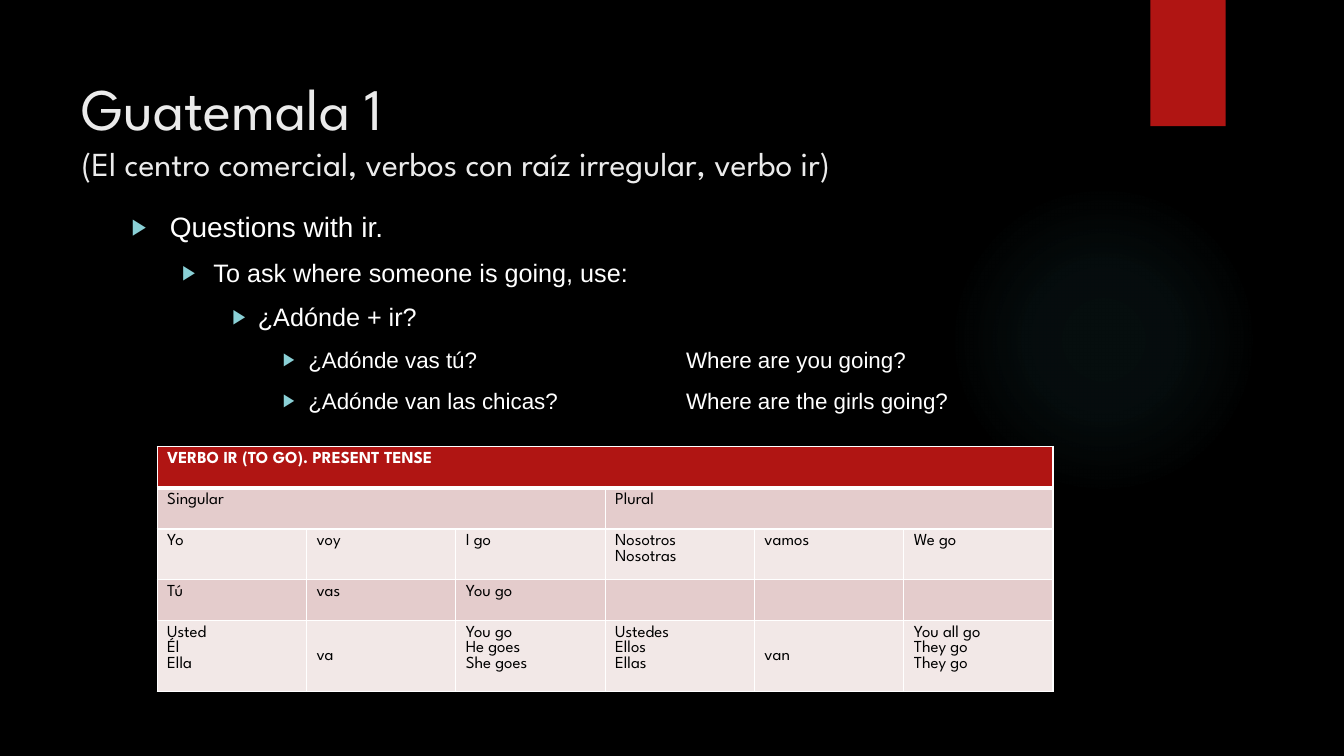
from pptx import Presentation
from pptx.dml.color import RGBColor
from pptx.enum.shapes import MSO_SHAPE as Kind
from pptx.enum.text import MSO_ANCHOR as Anchor
from pptx.oxml import parse_xml
from pptx.oxml.ns import nsdecls
from pptx.util import Cm, Pt

HEAD, BODY = "League Spartan", "Arial"
RED, WHITE, BLACK = "B01513", "FFFFFF", "000000"
BANDS = "E4CCCC", "F2E8E7"

POINTS = [
    (0, 20, "Questions with ir."),
    (1, 18, "To ask where someone is going, use:"),
    (2, 18, "¿Adónde + ir?"),
    (3, 16, "¿Adónde vas tú?\tWhere are you going?"),
    (3, 16, "¿Adónde van las chicas?\tWhere are the girls going?"),
]
INDENTS = [(0.96, 0.96), (2.06, 0.79), (3.18, 0.64), (4.45, 0.64)]

ROWS = [
    ["VERBO IR (TO GO). PRESENT TENSE", "", "", "", "", ""],
    ["Singular", "", "", "Plural", "", ""],
    ["Yo", "voy", "I go", "Nosotros\nNosotras", "vamos", "We go"],
    ["Tú", "vas", "You go", "", "", ""],
    ["Usted\nÉl\nElla", "va", "You go\nHe goes\nShe goes",
     "Ustedes\nEllos\nEllas", "van", "You all go\nThey go\nThey go"],
]
SPANS = [(0, 0, 5), (1, 0, 2), (1, 3, 5)]


def color(code):
    return RGBColor.from_string(code)


def xml(tag, inner="", **attrs):
    text = " ".join(f'{key}="{val}"' for key, val in attrs.items())
    return parse_xml(f"<a:{tag} {nsdecls('a')} {text}>{inner}</a:{tag}>")


def style(font, name, size, code, bold=False):
    font.name, font.size, font.bold = name, Pt(size), bold
    font.color.rgb = color(code)


def plain(slide, kind, box):
    shape = slide.shapes.add_shape(kind, *map(Cm, box))
    shape.shadow.inherit = False
    shape.line.fill.background()
    return shape


def add_glow(slide, box):
    glow = plain(slide, Kind.OVAL, box)
    glow.fill.gradient()
    grad = glow.fill._xPr.find(".//{*}gradFill")
    stops = "".join(
        f'<a:gs pos="{pos}000"><a:srgbClr val="50B9C1">'
        f'<a:alpha val="{alpha}000"/></a:srgbClr></a:gs>'
        for pos, alpha in [(0, 7), (36, 6), (69, 0)])
    for part in list(grad):
        grad.remove(part)
    grad.append(xml("gsLst", stops))
    centre = '<a:fillToRect l="50000" t="50000" r="50000" b="50000"/>'
    grad.append(xml("path", centre, path="circle"))


def add_tab(slide, box):
    tab = plain(slide, Kind.RECTANGLE, box)
    tab.fill.solid()
    tab.fill.fore_color.rgb = color(RED)


def add_title(slide, box):
    title = slide.shapes.title
    title.left, title.top, title.width, title.height = map(Cm, box)
    frame = title.text_frame
    frame.vertical_anchor = Anchor.MIDDLE
    frame.text = ("Guatemala 1\v"
                  "(El centro comercial, verbos con raíz irregular, verbo ir)")
    para = frame.paragraphs[0]
    para.alignment = 1
    for run, size in zip(para.runs, (42, 24)):
        style(run.font, HEAD, size, "EBEBEB")


def add_points(slide, box):
    frame = slide.shapes.add_textbox(*map(Cm, box)).text_frame
    frame.word_wrap = True
    frame.text = "\n".join(text for _, _, text in POINTS)
    for num, (para, (level, size, _)) in enumerate(
            zip(frame.paragraphs, POINTS)):
        left, hang = INDENTS[level]
        props = para._p.get_or_add_pPr()
        props.set("marL", str(Cm(left)))
        props.set("indent", str(-Cm(hang)))
        para.level = level
        para.space_before = Pt(10 if num else 0)
        props.append(xml("buClr", '<a:srgbClr val="8AD0D6"/>'))
        props.append(xml("buSzPct", val=80000))
        props.append(xml("buFont", typeface=BODY))
        props.append(xml("buChar", char="▶"))
        if level == 3:
            stop = f'<a:tab pos="{Cm(13.97)}" algn="l"/>'
            props.append(xml("tabLst", stop))
        for run in para.runs:
            style(run.font, BODY, size, WHITE)


def add_edges(cell, base):
    props = cell._tc.get_or_add_tcPr()
    fill = f'<a:solidFill><a:srgbClr val="{WHITE}"/></a:solidFill>'
    widths = {"lnL": 1, "lnR": 1, "lnT": 1, "lnB": base}
    for spot, (tag, width) in enumerate(widths.items()):
        props.insert(spot, xml(tag, fill, w=Pt(width)))


def add_verbs(slide, box):
    frame = slide.shapes.add_table(len(ROWS), len(ROWS[0]), *map(Cm, box))
    table = frame.table
    for row in table.rows:
        row.height = Cm(1.04)
    for r, row in enumerate(ROWS):
        for c, text in enumerate(row):
            cell = table.cell(r, c)
            cell.text = text
            cell.fill.solid()
            cell.fill.fore_color.rgb = color(BANDS[(r + 1) % 2] if r else RED)
            add_edges(cell, 1 if r else 3)
            for para in cell.text_frame.paragraphs:
                style(para.font, HEAD, 12, BLACK if r else WHITE, r == 0)
                for run in para.runs:
                    style(run.font, HEAD, 12, BLACK if r else WHITE, r == 0)
            if text in ("va", "van"):
                cell.vertical_anchor = Anchor.MIDDLE
    for r, first, last in SPANS:
        table.cell(r, first).merge(table.cell(r, last))


def main():
    deck = Presentation()
    deck.slide_width, deck.slide_height = Cm(33.87), Cm(19.05)
    slide = deck.slides.add_slide(deck.slide_layouts[5])
    slide.background.fill.solid()
    slide.background.fill.fore_color.rgb = color(BLACK)
    add_glow(slide, (23.9, 4.65, 7.82, 7.82))
    add_tab(slide, (28.99, 0, 1.9, 3.18))
    add_title(slide, (1.8, 1.27, 26.14, 3.89))
    add_points(slide, (3.07, 5.16, 26.34, 12.22))
    add_verbs(slide, (3.96, 11.25, 22.58, 5.2))
    deck.save("out.pptx")


if __name__ == "__main__":
    main()
